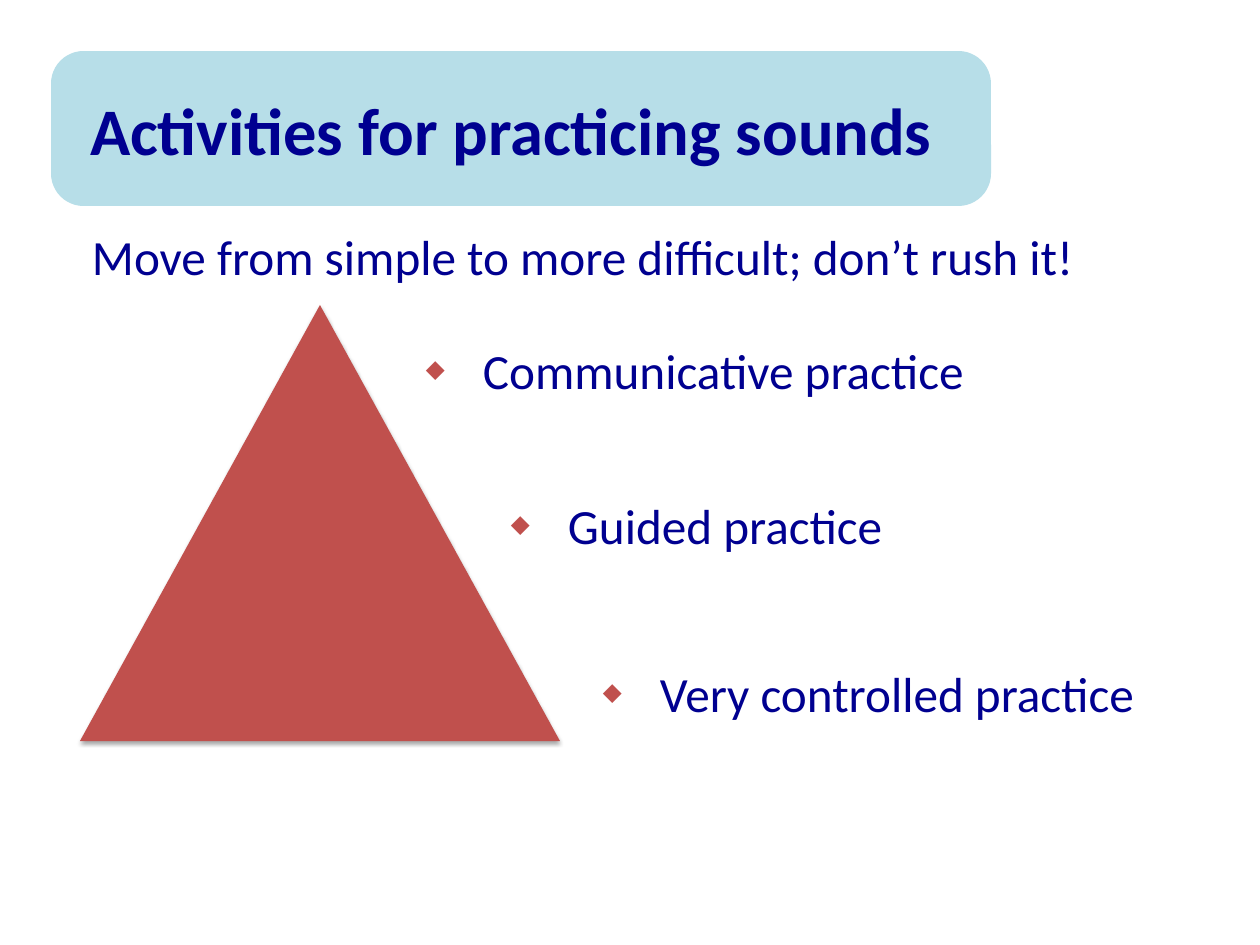
import pptx
import pptx.util
import pptx.dml.color
import pptx.enum.shapes
import pptx.enum.text
import pptx.oxml.ns
import lxml.etree

# Content
TITLE = "Activities for practicing sounds"
INTRO = "Move from simple to more difficult; don’t rush it!"
STEPS = [  # left px, top px, text
    (354, 334, "Communicative practice"),
    (439, 489, "Guided practice"),
    (531, 657, "Very controlled practice"),
]

NAVY = pptx.dml.color.RGBColor(0x00, 0x00, 0x90)
RED = pptx.dml.color.RGBColor(0xC0, 0x50, 0x4D)
SKY = pptx.dml.color.RGBColor(0xB7, 0xDE, 0xE8)
FONT = "Calibri"
PANEL = (51, 51, 940, 155)
INTRO_BOX = (80, 220, 1089, 73)
PEAK = (80, 305, 480, 436)
STEP_SIZE = (639, 73)
SCALE = 10320  # EMU in one px


def px(n):
    return pptx.util.Emu(n * SCALE)


def place(shape, box):
    shape.left, shape.top, shape.width, shape.height = map(px, box)


def node(parent, tag, **attrs):
    return lxml.etree.SubElement(parent, pptx.oxml.ns.qn(tag), attrs)


def write(shape, text, size, bold=False, left=12):
    frame = shape.text_frame
    frame.word_wrap = True
    frame.auto_size = pptx.enum.text.MSO_AUTO_SIZE.NONE
    frame.margin_left, frame.margin_right = px(left), px(12)
    frame.margin_top = frame.margin_bottom = px(6)
    frame.text = text
    para = frame.paragraphs[0]
    para.alignment = pptx.enum.text.PP_ALIGN.LEFT
    para.space_before = pptx.util.Pt(0)
    font = para.font
    font.name, font.size, font.bold = FONT, pptx.util.Pt(size), bold
    font.color.rgb = NAVY
    return para


def indent(para, margin, first):
    props = para._p.get_or_add_pPr()
    props.set("marL", str(px(margin)))
    props.set("indent", str(px(first)))
    return props


def bullet(para):
    props = indent(para, 117, -57)
    marks = [lxml.etree.Element(pptx.oxml.ns.qn(tag))
             for tag in ("a:buClr", "a:buSzPct", "a:buFont", "a:buChar")]
    color, size, face, char = marks
    node(color, "a:srgbClr", val=str(RED))
    size.set("val", "50000")
    face.set("typeface", FONT)
    char.set("char", "◆")
    spot = props.index(props.find(pptx.oxml.ns.qn("a:defRPr")))
    props[spot:spot] = marks


def panel(slide, kind, box, color):
    shape = slide.shapes.add_shape(kind, *map(px, box))
    shape.fill.solid()
    shape.fill.fore_color.rgb = color
    shape.line.fill.background()
    shape.shadow.inherit = False
    return shape


def main():
    deck = pptx.Presentation()
    deck.slide_width, deck.slide_height = px(1260), px(945)
    slide = deck.slides.add_slide(deck.slide_layouts[1])
    kinds = pptx.enum.shapes.MSO_SHAPE

    # Title on its rounded panel
    back = panel(slide, kinds.ROUNDED_RECTANGLE, PANEL, SKY)
    back.adjustments[0] = 0.21
    title, intro = slide.placeholders
    title._element.addprevious(back._element)
    place(title, PANEL)
    write(title, TITLE, 54, bold=True, left=39)
    title.text_frame.vertical_anchor = pptx.enum.text.MSO_ANCHOR.MIDDLE

    # Introductory line, without a bullet
    place(intro, INTRO_BOX)
    props = indent(write(intro, INTRO, 40), 0, 0)
    none = lxml.etree.Element(pptx.oxml.ns.qn("a:buNone"))
    props.find(pptx.oxml.ns.qn("a:defRPr")).addprevious(none)

    # Triangle with a soft shadow
    peak = panel(slide, kinds.ISOSCELES_TRIANGLE, PEAK, RED)
    effects = peak._element.spPr.find(pptx.oxml.ns.qn("a:effectLst"))
    shade = node(effects, "a:outerShdw", blurRad=str(pptx.util.Pt(3.1)),
                 dist=str(pptx.util.Pt(1.8)), dir="5400000", rotWithShape="0")
    node(node(shade, "a:srgbClr", val="000000"), "a:alpha", val="35000")

    # Practice steps beside the triangle
    for left, top, text in STEPS:
        box = slide.shapes.add_textbox(*map(px, (left, top, *STEP_SIZE)))
        bullet(write(box, text, 40))

    deck.save("out.pptx")


if __name__ == "__main__":
    main()
